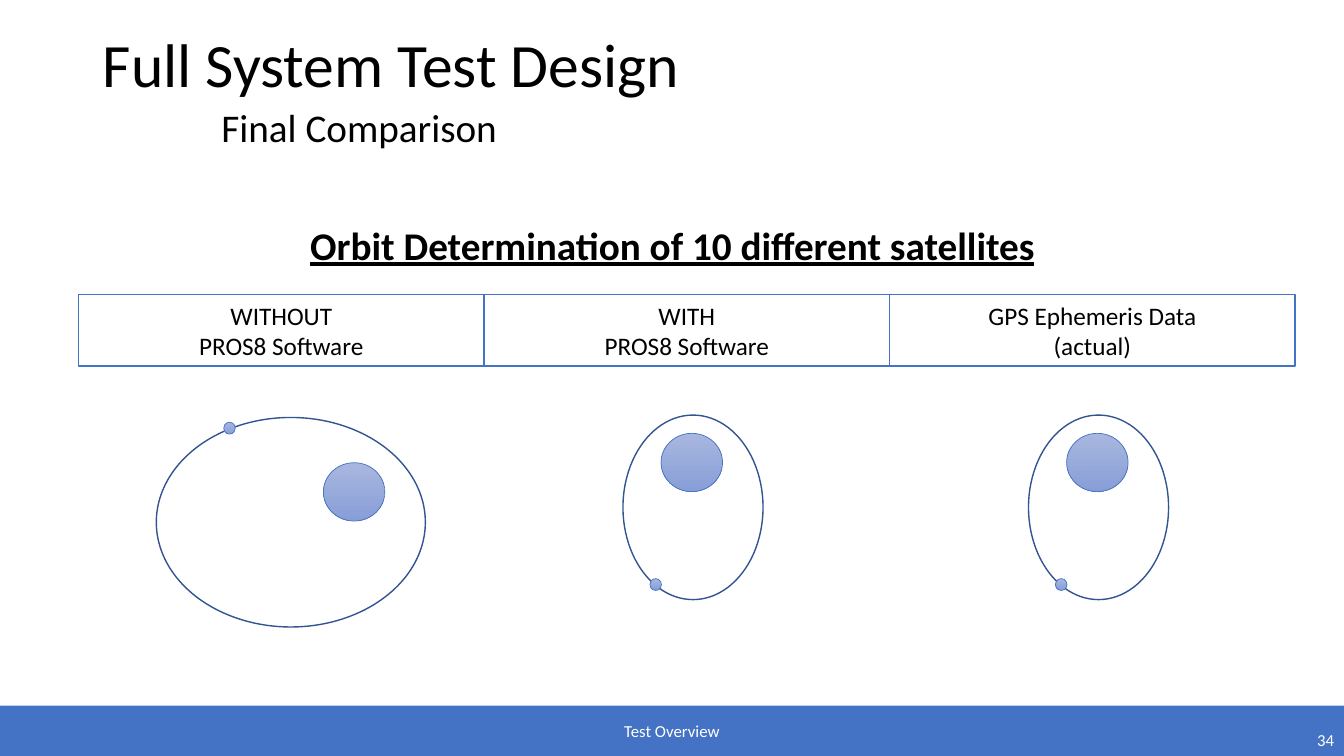
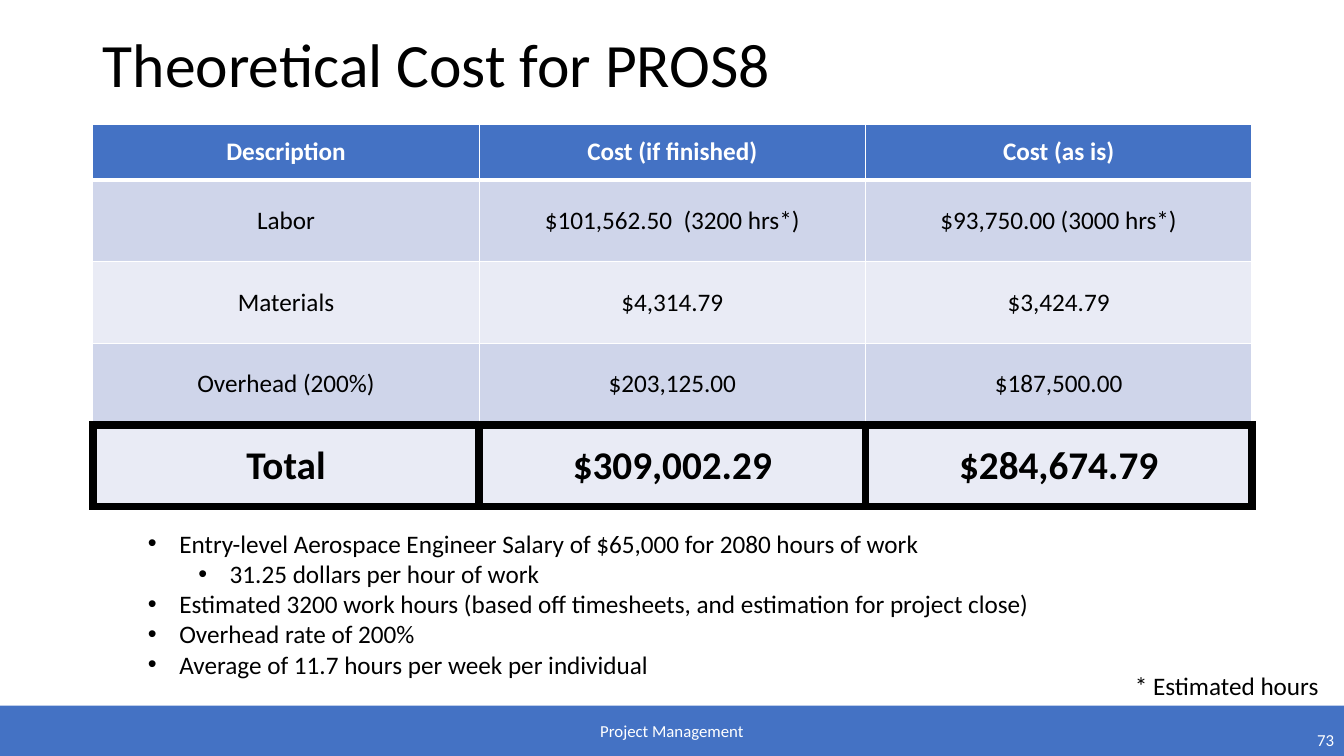
import pptx
import pptx.dml.color
import pptx.enum.shapes
import pptx.enum.text
import pptx.oxml
import pptx.oxml.ns
import pptx.util

Cm = pptx.util.Cm
Pt = pptx.util.Pt
ALIGN = pptx.enum.text.PP_ALIGN
ANCHOR = pptx.enum.text.MSO_ANCHOR
SHAPE = pptx.enum.shapes.MSO_SHAPE


def rgb(value):
    return pptx.dml.color.RGBColor.from_string(value)


class Deck:
    """Holds the shared style and the slide being drawn."""

    WIDTH, HEIGHT = 33.87, 19.05
    LEFT, BODY = 2.34, 29.21
    FONT = "Calibri"
    BLACK, WHITE = "000000", "FFFFFF"
    BLUE, DARK_BLUE = "4472C4", "325491"
    BANDS = "CFD5EA", "E9EBF5"
    GRADIENT = "A8B7DF", "889ED7"

    def __init__(self):
        self.prs = pptx.Presentation()
        self.prs.slide_width = Cm(self.WIDTH)
        self.prs.slide_height = Cm(self.HEIGHT)
        self.s = None

    def slide(self, title, section, number):
        self.s = self.prs.slides.add_slide(self.prs.slide_layouts[6])
        self.text([title], self.LEFT, 0.05, self.BODY, 3.3, size=44,
                  anchor=ANCHOR.MIDDLE, spacing=0.9)
        self.box([section], 0, 17.78, self.WIDTH, 1.27, fill=self.BLUE,
                 size=12, color=self.WHITE)
        self.text([number], 26.25, 18.26, 7.62, 0.79, size=12,
                  color=self.WHITE, align=ALIGN.RIGHT, anchor=ANCHOR.MIDDLE)

    def add_lines(self, tf, lines, size=18, color=BLACK, bold=False,
                  underline=False, align=ALIGN.LEFT, spacing=None):
        for i, line in enumerate(lines):
            p = tf.paragraphs[0] if i == 0 else tf.add_paragraph()
            p.alignment = align
            if spacing:
                p.line_spacing = spacing
            r = p.add_run()
            r.text = line
            r.font.name = self.FONT
            r.font.size = Pt(size)
            r.font.bold = bold
            r.font.underline = underline
            r.font.color.rgb = rgb(color)

    def text(self, lines, x, y, w, h, anchor=ANCHOR.TOP, **style):
        tf = self.s.shapes.add_textbox(Cm(x), Cm(y), Cm(w), Cm(h)).text_frame
        tf.word_wrap = True
        tf.vertical_anchor = anchor
        self.add_lines(tf, lines, **style)
        return tf

    def bullets(self, items, x, y, w, h):
        tf = self.text([line for _, line in items], x, y, w, h)
        for p, (level, _) in zip(tf.paragraphs, items):
            p.level = level
            pPr = p._p.get_or_add_pPr()
            pPr.set("marL", str(Cm(0.79 + 1.27 * level)))
            pPr.set("indent", str(Cm(-0.79)))
            ns = pptx.oxml.ns.nsdecls("a")
            pPr.append(pptx.oxml.parse_xml(f'<a:buFont {ns} typeface="Arial"/>'))
            pPr.append(pptx.oxml.parse_xml(f'<a:buChar {ns} char="•"/>'))

    def shape(self, kind, x, y, w, h, line=None, weight=1):
        sp = self.s.shapes.add_shape(kind, Cm(x), Cm(y), Cm(w), Cm(h))
        sp.shadow.inherit = False
        if line:
            sp.line.color.rgb = rgb(line)
            sp.line.width = Pt(weight)
        else:
            sp.line.fill.background()
        return sp

    def box(self, lines, x, y, w, h, fill=WHITE, line=None, **style):
        sp = self.shape(SHAPE.RECTANGLE, x, y, w, h, line)
        sp.fill.solid()
        sp.fill.fore_color.rgb = rgb(fill)
        sp.text_frame.word_wrap = True
        sp.text_frame.vertical_anchor = ANCHOR.MIDDLE
        self.add_lines(sp.text_frame, lines, align=ALIGN.CENTER, **style)

    def ball(self, x, y, w, h):
        sp = self.shape(SHAPE.OVAL, x, y, w, h, self.BLUE, 0.5)
        sp.fill.gradient()
        sp.fill.gradient_angle = 270
        for stop, color in zip(sp.fill.gradient_stops, self.GRADIENT):
            stop.color.rgb = rgb(color)

    def orbit(self, ellipse, planet, satellite):
        self.ball(*planet, 1.55, 1.47)
        self.shape(SHAPE.OVAL, *ellipse, self.DARK_BLUE).fill.background()
        self.ball(*satellite, 0.29, 0.3)

    def border(self, cell, side, color, weight):
        cell._tc.get_or_add_tcPr().append(pptx.oxml.parse_xml(
            f'<a:ln{side} {pptx.oxml.ns.nsdecls("a")} w="{Pt(weight)}">'
            f'<a:solidFill><a:srgbClr val="{color}"/></a:solidFill>'
            f'</a:ln{side}>'))

    def table(self, rows, x, y, w, heights):
        tbl = self.s.shapes.add_table(len(rows), len(rows[0]), Cm(x), Cm(y),
                                      Cm(w), Cm(sum(heights))).table
        tbl.horz_banding = False
        thin, thick = (self.WHITE, 1), (self.BLACK, 6)
        last = len(rows) - 1
        rules = [thin, (self.WHITE, 3)] + [thin] * (last - 2) + [thick] * 2
        for i, row in enumerate(rows):
            tbl.rows[i].height = Cm(heights[i])
            side = thick if i == last else thin
            for j, value in enumerate(row):
                cell = tbl.cell(i, j)
                cell.vertical_anchor = ANCHOR.MIDDLE
                edges = {"L": side, "R": side, "T": rules[i], "B": rules[i + 1]}
                for name, edge in edges.items():
                    self.border(cell, name, *edge)
                cell.fill.solid()
                cell.fill.fore_color.rgb = rgb(
                    self.BANDS[(i - 1) % 2] if i else self.BLUE)
                self.add_lines(cell.text_frame, [value], align=ALIGN.CENTER,
                               size=28 if i == last else 18,
                               bold=i in (0, last),
                               color=self.BLACK if i else self.WHITE)


def comparison(deck):
    deck.slide("Full System Test Design", "Test Overview", "34")
    deck.text(["Final Comparison"], 5.33, 2.72, 9.25, 1.27, size=28, spacing=0.8)
    deck.text(["Orbit Determination of 10 different satellites"], deck.LEFT, 5.44,
              deck.BODY, 1.45, size=28, bold=True, underline=True,
              align=ALIGN.CENTER)
    pitch = 10.22
    headings = [("WITHOUT", "PROS8 Software"), ("WITH", "PROS8 Software"),
                ("GPS Ephemeris Data", "(actual)")]
    for i, lines in enumerate(headings):
        deck.box(lines, 1.98 + i * pitch, 7.42, pitch, 1.8, line=deck.BLUE)
    deck.orbit((3.94, 10.52, 6.78, 5.28), (8.15, 11.66), (5.64, 10.64))
    for dx in (0, pitch):
        deck.orbit((15.7 + dx, 10.46, 3.53, 4.65), (16.66 + dx, 10.92),
                   (16.38 + dx, 14.58))


def cost(deck):
    deck.slide("Theoretical Cost for PROS8", "Project Management", "73")
    deck.table([
        ("Description", "Cost (if finished)", "Cost (as is)"),
        ("Labor", "$101,562.50  (3200 hrs*)", "$93,750.00 (3000 hrs*)"),
        ("Materials", "$4,314.79", "$3,424.79"),
        ("Overhead (200%)", "$203,125.00", "$187,500.00"),
        ("Total", "$309,002.29", "$284,674.79"),
    ], deck.LEFT, 3.13, deck.BODY, [1.4] + [2.06] * 4)
    deck.bullets([
        (0, "Entry-level Aerospace Engineer Salary of $65,000 for 2080 hours of work"),
        (1, "31.25 dollars per hour of work"),
        (0, "Estimated 3200 work hours (based off timesheets, and estimation for "
            "project close)"),
        (0, "Overhead rate of 200%"),
        (0, "Average of 11.7 hours per week per individual"),
    ], 3.48, 13.18, 25.3, 4.11)
    deck.text(["* Estimated hours"], 28.35, 16.76, 5.26, 1.02)


def main():
    deck = Deck()
    comparison(deck)
    cost(deck)
    deck.prs.save("out.pptx")


if __name__ == "__main__":
    main()
